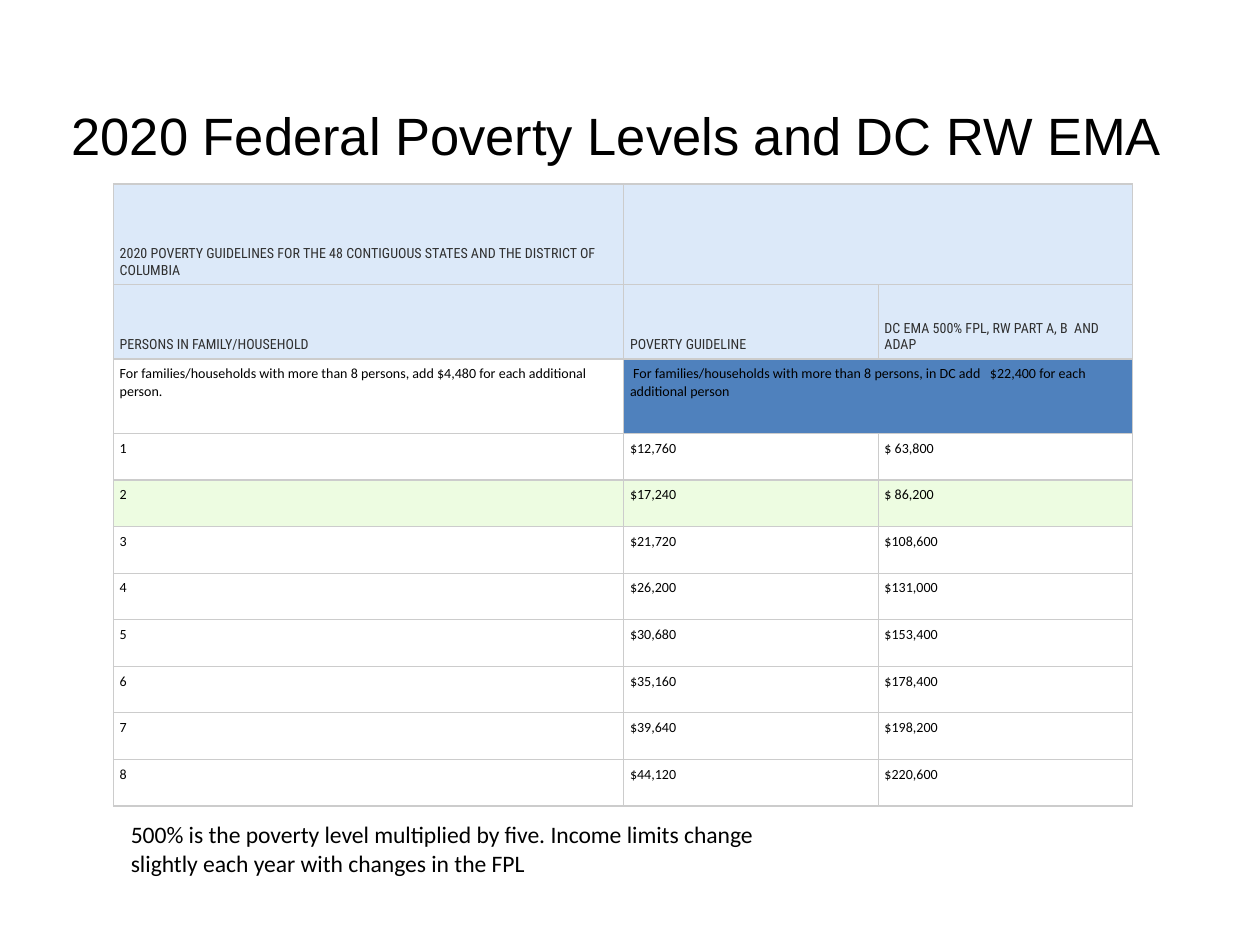
from dataclasses import dataclass

from lxml import etree
from pptx import Presentation
from pptx.dml.color import RGBColor
from pptx.enum.text import MSO_ANCHOR
from pptx.oxml.ns import qn
from pptx.util import Inches, Pt

TOP, BOTTOM = MSO_ANCHOR.TOP, MSO_ANCHOR.BOTTOM
BLACK, GRAY, WHITE = "000000", "2F2F2F", "FFFFFF"
PALE_BLUE, BLUE, PALE_GREEN, BORDER = "DCE9F9", "4F81BD", "EDFCE1", "CCCCCC"


@dataclass
class TextStyle:
    font: str
    size: float
    color: str
    anchor: MSO_ANCHOR = TOP


@dataclass
class TableRow:
    texts: list[str]
    fills: list[str]
    style: TextStyle
    height: float = 0.37
    merge_last: bool = False


HEADING = TextStyle("Roboto Condensed", 8, GRAY, BOTTOM)
BODY = TextStyle("Calibri", 8, BLACK)
TITLE = TextStyle("Arial", 30, BLACK)
NOTE = TextStyle("Calibri", 13.5, BLACK)

GUIDELINES = [
    ("1", "$12,760", "$ 63,800"),
    ("2", "$17,240", "$ 86,200"),
    ("3", "$21,720", "$108,600"),
    ("4", "$26,200", "$131,000"),
    ("5", "$30,680", "$153,400"),
    ("6", "$35,160", "$178,400"),
    ("7", "$39,640", "$198,200"),
    ("8", "$44,120", "$220,600"),
]
COLUMN_WIDTHS = [4.05, 2.02, 2.02]
HIGHLIGHTED_HOUSEHOLD = "2"


def rgb(color: str) -> RGBColor:
    return RGBColor.from_string(color)


def add_span(frame, text: str, style: TextStyle) -> None:
    span = frame.paragraphs[0].add_run()
    span.text = text
    span.font.name = style.font
    span.font.size = Pt(style.size)
    span.font.color.rgb = rgb(style.color)


def add_text(page, text: str, style: TextStyle, left: float, top: float,
             width: float, height: float) -> None:
    box = page.shapes.add_textbox(Inches(left), Inches(top), Inches(width), Inches(height))
    box.text_frame.word_wrap = True
    add_span(box.text_frame, text, style)


def set_borders(cell) -> None:
    properties = cell._tc.get_or_add_tcPr()
    for index, side in enumerate(("a:lnL", "a:lnR", "a:lnT", "a:lnB")):
        line = etree.Element(qn(side), w=str(Pt(0.75)))
        fill = etree.SubElement(line, qn("a:solidFill"))
        etree.SubElement(fill, qn("a:srgbClr"), val=BORDER)
        properties.insert(index, line)


def style_cell(cell, text: str, fill: str, style: TextStyle) -> None:
    cell.margin_left = cell.margin_right = Inches(0.05)
    cell.margin_top = cell.margin_bottom = Inches(0.05)
    cell.vertical_anchor = style.anchor
    cell.fill.solid()
    cell.fill.fore_color.rgb = rgb(fill)
    set_borders(cell)
    if text:
        add_span(cell.text_frame, text, style)


def add_guideline_table(page, rows: list[TableRow], left: float, top: float) -> None:
    frame = page.shapes.add_table(
        len(rows), len(COLUMN_WIDTHS), Inches(left), Inches(top),
        Inches(sum(COLUMN_WIDTHS)), Inches(sum(row.height for row in rows)))
    table = frame.table
    table.first_row = table.horz_banding = False
    for column, width in zip(table.columns, COLUMN_WIDTHS):
        column.width = Inches(width)
    for index, row in enumerate(rows):
        table.rows[index].height = Inches(row.height)
        for column, (text, fill) in enumerate(zip(row.texts, row.fills)):
            style_cell(table.cell(index, column), text, fill, row.style)
        if row.merge_last:
            table.cell(index, 1).merge(table.cell(index, 2))


def build_rows() -> list[TableRow]:
    rows = [
        TableRow(["2020 POVERTY GUIDELINES FOR THE 48 CONTIGUOUS STATES AND THE "
                  "DISTRICT OF COLUMBIA", "", ""],
                 [PALE_BLUE] * 3, HEADING, 0.8, True),
        TableRow(["PERSONS IN FAMILY/HOUSEHOLD", "POVERTY GUIDELINE",
                  "DC EMA 500% FPL, RW PART A, B  AND ADAP"],
                 [PALE_BLUE] * 3, HEADING, 0.59),
        TableRow(["For families/households with more than 8 persons, add $4,480 "
                  "for each additional person.",
                  " For families/households with more than 8 persons, in DC add   "
                  "$22,400 for each additional person", ""],
                 [WHITE, BLUE, BLUE], BODY, 0.59, True),
    ]
    for values in GUIDELINES:
        fill = PALE_GREEN if values[0] == HIGHLIGHTED_HOUSEHOLD else WHITE
        rows.append(TableRow(list(values), [fill] * 3, BODY))
    return rows


def main() -> None:
    deck = Presentation()
    deck.slide_width, deck.slide_height = Inches(10), Inches(7.5)
    page = deck.slides.add_slide(deck.slide_layouts[6])

    # Poverty guideline table
    add_guideline_table(page, build_rows(), 0.9, 1.46)

    # Note below the table
    add_text(page, "500% is the poverty level multiplied by five. Income limits change "
             "slightly each year with changes in the FPL", NOTE, 0.94, 6.46, 5.57, 0.78)

    # Title
    add_text(page, "2020 Federal Poverty Levels and DC RW EMA", TITLE, 0.47, 0.77, 8.98, 0.61)

    deck.save("out.pptx")


if __name__ == "__main__":
    main()
